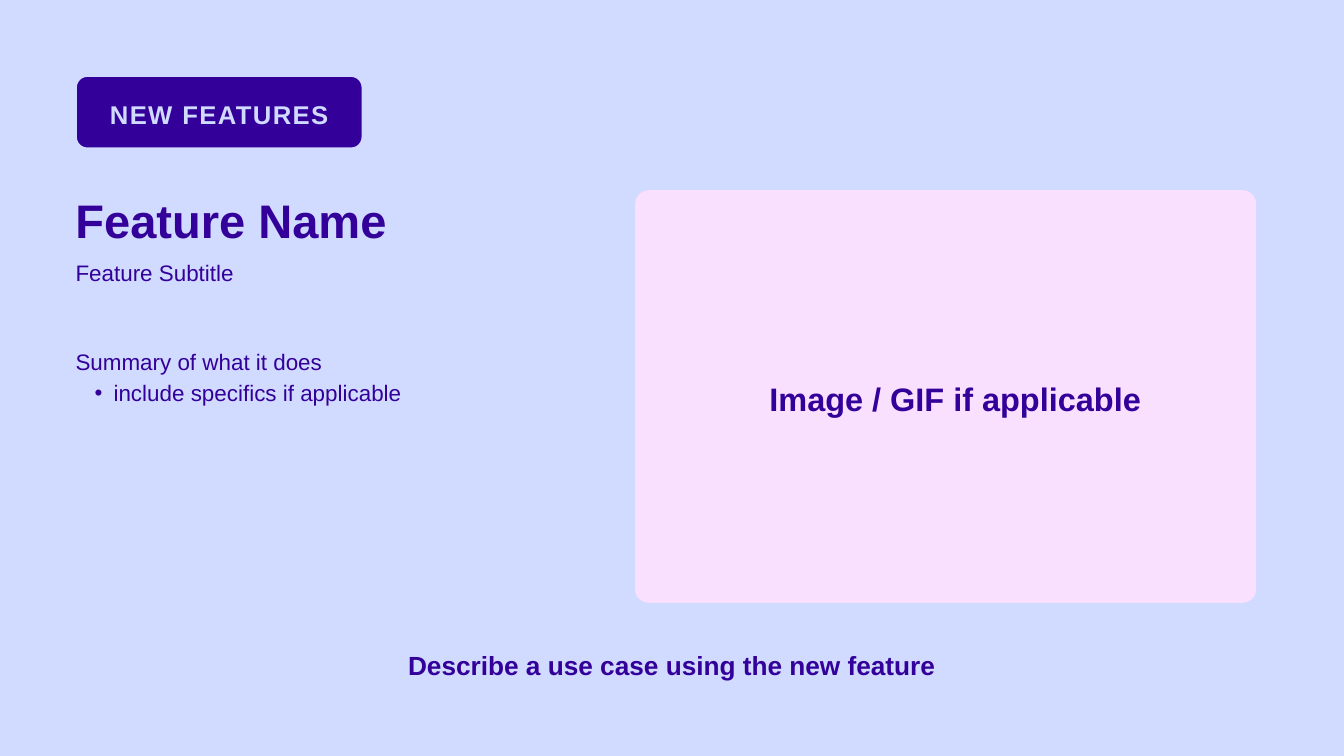
from pptx import Presentation
from pptx.dml.color import RGBColor
from pptx.enum.shapes import MSO_SHAPE as Kind
from pptx.enum.text import MSO_AUTO_SIZE as Fit, PP_ALIGN as Align
from pptx.oxml.ns import qn
from pptx.util import Pt
from lxml.etree import SubElement as Sub

INK = "330099"
SKY = "D1DAFF"
PINK = "FAE0FF"


def tint(code):
    return RGBColor.from_string(code)


def card(slide, box, fill, curve, edge=None):
    left, top, width, height = box
    shape = slide.shapes.add_shape(Kind.ROUNDED_RECTANGLE, *map(Pt, box))
    shape.adjustments[0] = curve / min(width, height)
    shape.shadow.inherit = False
    shape.fill.solid()
    shape.fill.fore_color.rgb = tint(fill)
    if edge:
        shape.line.color.rgb = tint(edge)
        shape.line.width = Pt(3)
    else:
        shape.line.fill.background()


def frame(slide, box):
    text = slide.shapes.add_textbox(*map(Pt, box)).text_frame
    text.word_wrap = True
    text.auto_size = Fit.SHAPE_TO_FIT_TEXT
    text.margin_left = text.margin_right = 0
    text.margin_top = text.margin_bottom = 0
    return text


def write(para, words, size, lead, align, bold=False, color=INK):
    para.alignment = align
    para.line_spacing = Pt(lead)
    run = para.add_run()
    run.text = words
    font = run.font
    font.name = "Arial"
    font.size = Pt(size)
    font.bold = bold
    font.color.rgb = tint(color)
    return run


def bullet(para, left, hang):
    para.level = 1
    props = para._p.get_or_add_pPr()
    props.set("marL", str(Pt(left)))
    props.set("indent", str(Pt(-hang)))
    Sub(props, qn("a:buFont")).set("typeface", "Arial")
    Sub(props, qn("a:buChar")).set("char", "•")


def badge(slide, box):
    left, top, width, height = box
    card(slide, box, INK, 12.6, SKY)
    text = frame(slide, (left + 23.8, top + 19.4, width - 47.6, 37.4))
    run = write(text.paragraphs[0], "NEW FEATURES", 27.5, 38.6,
                Align.CENTER, True, SKY)
    run._r.get_or_add_rPr().set("spc", "150")


def panel(slide, box):
    left, top, width, height = box
    card(slide, box, PINK, 14.4)
    text = frame(slide, (left + 115.9, top + 195.1, 454.3, 47.5))
    write(text.paragraphs[0], "Image / GIF if applicable", 34.8, 48.6,
          Align.CENTER, True)


def feature(slide, box):
    left, top, width, height = box
    name = frame(slide, (left, top, width, 69.1))
    write(name.paragraphs[0], "Feature Name", 50.4, 70.6, Align.LEFT, True)
    sub = frame(slide, (left, top + 77.8, width - 20.2, 32.4))
    write(sub.paragraphs[0], "Feature Subtitle", 24, 33.6, Align.JUSTIFY)
    body = frame(slide, (left, top + height - 65.5, 435.6, 65.5))
    write(body.paragraphs[0], "Summary of what it does", 24, 33.6,
          Align.JUSTIFY)
    item = body.add_paragraph()
    write(item, "include specifics if applicable", 24, 33.6, Align.JUSTIFY)
    bullet(item, 40.8, 20.4)


def footer(slide, box):
    text = frame(slide, box)
    write(text.paragraphs[0], "Describe a use case using the new feature",
          28.1, 39.3, Align.CENTER, True)


def main():
    deck = Presentation()
    deck.slide_width = Pt(1440)
    deck.slide_height = Pt(810)
    slide = deck.slides.add_slide(deck.slide_layouts[6])
    back = slide.background.fill
    back.solid()
    back.fore_color.rgb = tint(SKY)
    badge(slide, (80.9, 80.9, 308, 78.6))
    panel(slide, (680.5, 203.8, 665.3, 442))
    feature(slide, (80.9, 195.1, 659.5, 238.3))
    footer(slide, (410.4, 690.5, 618.5, 38.2))
    deck.save("out.pptx")


if __name__ == "__main__":
    main()
